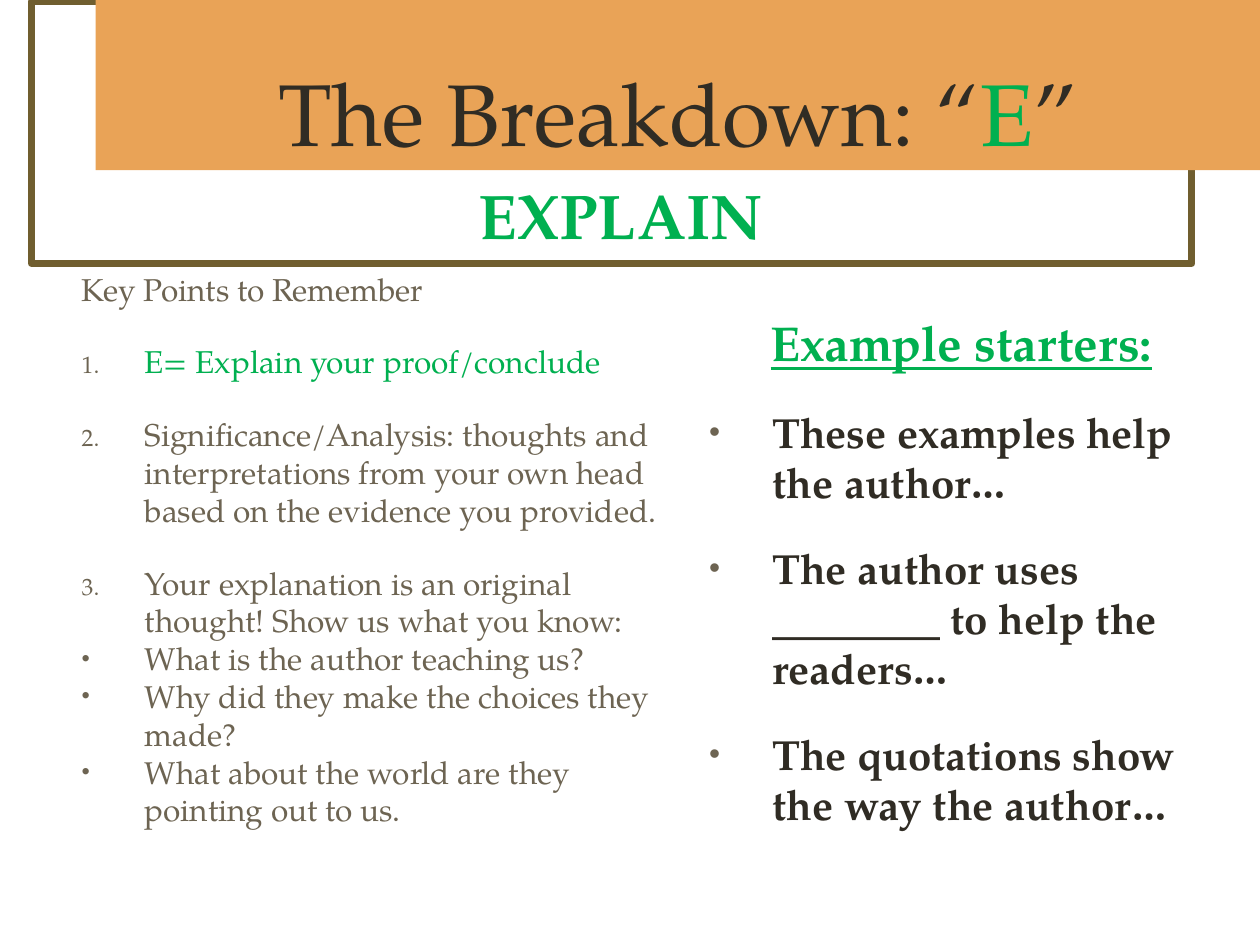
from lxml import etree
from pptx import Presentation
from pptx.dml.color import RGBColor
from pptx.enum.shapes import MSO_SHAPE
from pptx.enum.text import MSO_ANCHOR, PP_ALIGN
from pptx.oxml.ns import qn
from pptx.util import Pt

CENTER = PP_ALIGN.CENTER
LEFT = PP_ALIGN.LEFT
BOTTOM = MSO_ANCHOR.BOTTOM
CORNER = MSO_SHAPE.CORNER
RECTANGLE = MSO_SHAPE.RECTANGLE

FONT = "TeX Gyre Pagella"
COLORS = {
    "white": "FFFFFF",
    "banner": "E9A357",
    "frame": "705E2F",
    "dark": "302C24",
    "muted": "6D6452",
    "green": "00B050",
}
INDENT = 36
GAP = 20


def color(name):
    return RGBColor.from_string(COLORS[name])


def add_span(para, text, size, tone, bold=False, underline=False):
    span = para.add_run()
    span.text = text
    font = span.font
    font.name = FONT
    font.size = Pt(size)
    font.color.rgb = color(tone)
    font.bold = bold
    font.underline = underline


def set_marker(para, marker):
    props = para._p.get_or_add_pPr()
    props.set("marL", str(Pt(INDENT)))
    props.set("indent", str(Pt(-INDENT)))
    if marker is None:
        etree.SubElement(props, qn("a:buNone"))
        return
    tint = etree.SubElement(props, qn("a:buClr"))
    etree.SubElement(tint, qn("a:srgbClr"), val=COLORS["muted"])
    etree.SubElement(props, qn("a:buSzPct"), val="75000")
    if marker == "number":
        etree.SubElement(props, qn("a:buFont"), typeface=FONT)
        etree.SubElement(props, qn("a:buAutoNum"), type="arabicPeriod")
    else:
        etree.SubElement(props, qn("a:buFont"), typeface="Arial")
        etree.SubElement(props, qn("a:buChar"), char=marker)


def add_text_frame(page, box):
    frame = page.shapes.add_textbox(*map(Pt, box)).text_frame
    frame.word_wrap = True
    return frame


def next_para(frame, first, align=LEFT, before=0):
    para = frame.paragraphs[0] if first else frame.add_paragraph()
    para.alignment = align
    para.space_before = Pt(before)
    return para


def add_key_points(page, box):
    points = [
        (None, "Key Points to Remember", "muted", GAP),
        ("number", "E= Explain your proof/conclude", "green", GAP),
        ("number", "Significance/Analysis: thoughts and interpretations from "
         "your own head based on the evidence you provided.", "muted", GAP),
        ("number", "Your explanation is an original thought! "
         "Show us what you know:", "muted", GAP),
        ("•", "What is the author teaching us?", "muted", 0),
        ("•", "Why did they make the choices they made?", "muted", 0),
        ("•", "What about the world are they pointing out to us.", "muted", 0),
    ]
    frame = add_text_frame(page, box)
    for index, (marker, text, tone, before) in enumerate(points):
        para = next_para(frame, index == 0, before=before)
        set_marker(para, marker)
        add_span(para, text, 18, tone)


def add_starters(page, box):
    starters = [
        "These examples help the author…",
        "The author uses ________ to help the readers…",
        "The quotations show the way the author…",
    ]
    frame = add_text_frame(page, box)
    heading = next_para(frame, True, CENTER, GAP)
    add_span(heading, "Example starters:", 28, "green", True, True)
    for text in starters:
        para = next_para(frame, False, before=GAP)
        set_marker(para, "•")
        add_span(para, text, 24, "dark", True)


def add_frame(page, box):
    corner = page.shapes.add_shape(CORNER, *map(Pt, box))
    corner.shadow.inherit = False
    corner.adjustments[0] = 0.48
    corner.adjustments[1] = 0.51
    corner.fill.solid()
    corner.fill.fore_color.rgb = color("white")
    corner.line.color.rgb = color("frame")
    corner.line.width = Pt(4)
    etree.SubElement(corner.line._get_or_add_ln(), qn("a:round"))


def add_title(page, box):
    banner = page.shapes.add_shape(RECTANGLE, *map(Pt, box))
    banner.shadow.inherit = False
    banner.fill.solid()
    banner.fill.fore_color.rgb = color("banner")
    banner.line.fill.background()
    frame = banner.text_frame
    frame.word_wrap = True
    frame.vertical_anchor = BOTTOM
    para = next_para(frame, True, CENTER)
    for text, tone in [("The Breakdown: “", "dark"), ("E", "green"), ("”", "dark")]:
        add_span(para, text, 50, tone)


def add_subtitle(page, box):
    para = next_para(add_text_frame(page, box), True, CENTER)
    add_span(para, "EXPLAIN", 36, "green", True)


def main():
    deck = Presentation()
    deck.slide_width = Pt(720)
    deck.slide_height = Pt(540)
    page = deck.slides.add_slide(deck.slide_layouts[6])
    add_key_points(page, (39.6, 150.5, 359.3, 343.5))
    add_starters(page, (398.2, 175, 302.4, 343.5))
    add_frame(page, (18, 0.7, 663.1, 149.8))
    add_title(page, (54.7, 0, 665.3, 97.2))
    add_subtitle(page, (188.6, 97.2, 332.6, 51.1))
    deck.save("out.pptx")


if __name__ == "__main__":
    main()
